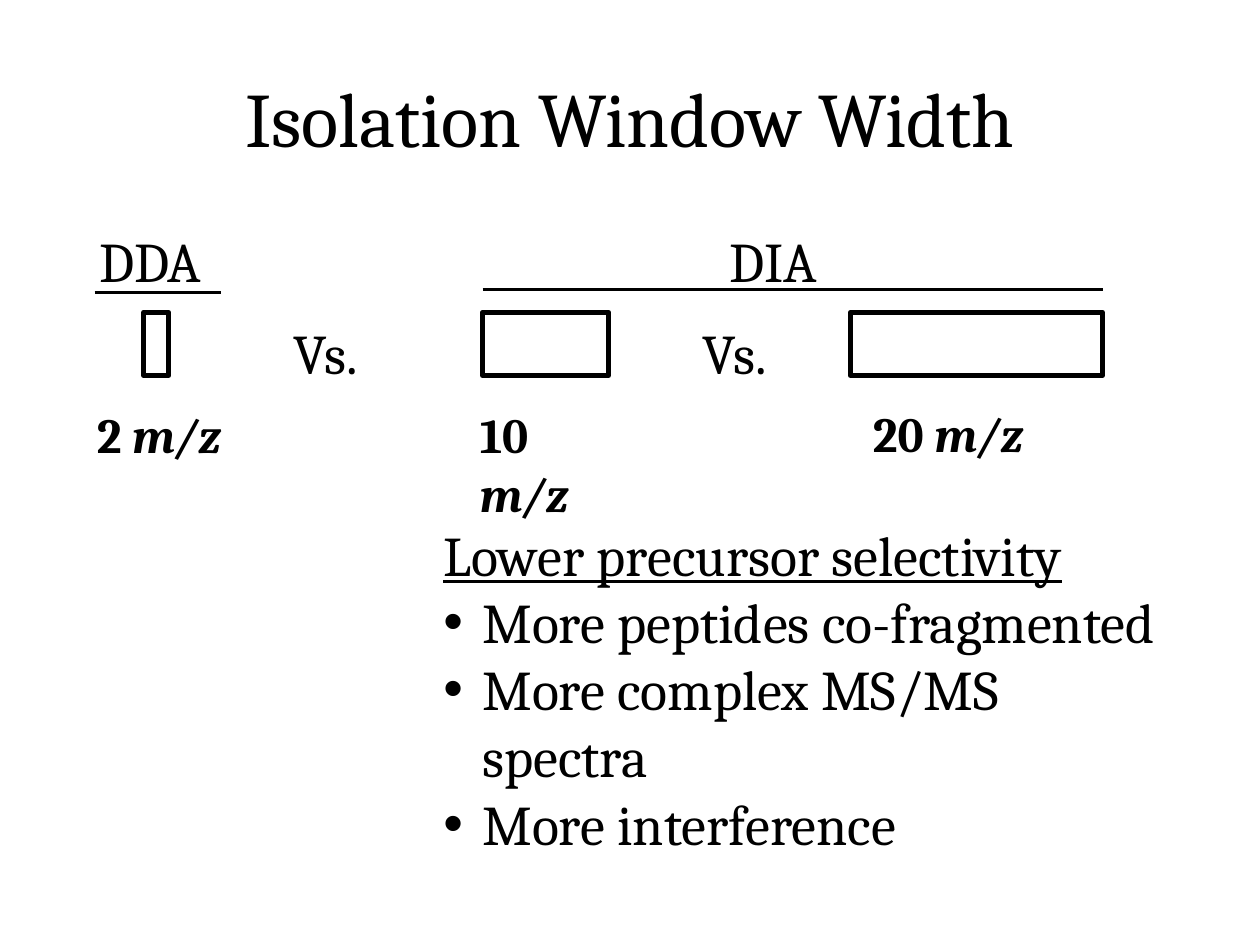
"""Build a slide on isolation window widths in DDA and DIA."""
from dataclasses import dataclass

import pptx
import pptx.dml.color
import pptx.enum.shapes
import pptx.enum.text
import pptx.oxml.ns
import pptx.util
from lxml import etree

Inches = pptx.util.Inches
Pt = pptx.util.Pt


@dataclass(frozen=True)
class Theme:
    """Colours, font and type sizes of the slide."""
    ink: pptx.dml.color.RGBColor = pptx.dml.color.RGBColor(0, 0, 0)
    paper: pptx.dml.color.RGBColor = pptx.dml.color.RGBColor(255, 255, 255)
    face: str = "Cambria"
    title: int = 44
    body: int = 32
    label: int = 28
    frame: float = 3
    rule: float = 1.5


@dataclass(frozen=True)
class Window:
    """An isolation window with its m/z label."""
    left: float
    width: float
    size: str
    tag_left: float
    tag_top: float
    tag_width: float


@dataclass(frozen=True)
class Word:
    """A short text on one line."""
    text: str
    left: float
    top: float
    width: float


@dataclass(frozen=True)
class Rule:
    """A level line below a heading."""
    left: float
    right: float
    top: float


THEME = Theme()
ROW = 2.48
WINDOWS = (
    Window(1.14, 0.2, "2 ", 0.67, 3.16, 1.22),
    Window(3.83, 1, "10 ", 3.71, 3.16, 1.37),
    Window(6.75, 2, "20 ", 6.83, 3.15, 1.4),
)
WORDS = (
    Word("Vs.", 2.23, ROW, 0.75),
    Word("Vs.", 5.48, ROW, 0.75),
    Word("DDA", 0.69, 1.75, 1.17),
    Word("DIA", 5.69, 1.75, 1.01),
)
RULES = (Rule(0.75, 1.75, 2.32), Rule(3.83, 8.75, 2.3))
HEAD = "Lower precursor selectivity"
POINTS = (
    "More peptides co-fragmented",
    "More complex MS/MS spectra",
    "More interference",
)


def style(para, size: int) -> None:
    """Set the theme font on a paragraph."""
    para.font.name = THEME.face
    para.font.size = Pt(size)
    para.font.color.rgb = THEME.ink


def add_box(slide, left: float, top: float, width: float, height: float, wrap: bool = False):
    """Add a text box and return its text frame."""
    box = slide.shapes.add_textbox(Inches(left), Inches(top), Inches(width), Inches(height))
    frame = box.text_frame
    frame.word_wrap = wrap
    frame.auto_size = pptx.enum.text.MSO_AUTO_SIZE.SHAPE_TO_FIT_TEXT
    return frame


def add_title(slide, text: str) -> None:
    """Place and fill the title."""
    title = slide.shapes.title
    title.left, title.top = Inches(0.5), Inches(0.3)
    title.width, title.height = Inches(9), Inches(1.25)
    frame = title.text_frame
    frame.text = text
    frame.vertical_anchor = pptx.enum.text.MSO_ANCHOR.MIDDLE
    para = frame.paragraphs[0]
    para.alignment = pptx.enum.text.PP_ALIGN.CENTER
    style(para, THEME.title)


def add_window(slide, win: Window) -> None:
    """Draw a window and its label."""
    rect = slide.shapes.add_shape(
        pptx.enum.shapes.MSO_SHAPE.RECTANGLE,
        Inches(win.left), Inches(ROW), Inches(win.width), Inches(0.5))
    rect.shadow.inherit = False
    rect.fill.solid()
    rect.fill.fore_color.rgb = THEME.paper
    rect.line.color.rgb = THEME.ink
    rect.line.width = Pt(THEME.frame)
    para = add_box(slide, win.tag_left, win.tag_top, win.tag_width, 0.57).paragraphs[0]
    style(para, THEME.label)
    para.font.bold = True
    para.add_run().text = win.size
    unit = para.add_run()
    unit.text = "m/z"
    unit.font.italic = True


def add_word(slide, word: Word) -> None:
    """Write a short text."""
    para = add_box(slide, word.left, word.top, word.width, 0.64).paragraphs[0]
    para.text = word.text
    style(para, THEME.body)


def add_rule(slide, rule: Rule) -> None:
    """Draw a line without a shadow."""
    line = slide.shapes.add_connector(
        pptx.enum.shapes.MSO_CONNECTOR.STRAIGHT,
        Inches(rule.left), Inches(rule.top), Inches(rule.right), Inches(rule.top))
    line.line.color.rgb = THEME.ink
    line.line.width = Pt(THEME.rule)
    etree.SubElement(line.element.spPr, pptx.oxml.ns.qn("a:effectLst"))


def add_bullet(para) -> None:
    """Give a paragraph a hanging bullet."""
    props = para._p.get_or_add_pPr()
    indent = Inches(0.31)
    props.set("marL", str(indent))
    props.set("indent", str(-indent))
    etree.SubElement(props, pptx.oxml.ns.qn("a:buFont"), typeface="Arial")
    etree.SubElement(props, pptx.oxml.ns.qn("a:buChar"), char="•")


def add_list(slide) -> None:
    """Write the underlined heading and its points."""
    frame = add_box(slide, 3.42, 4.08, 6, 2.26, wrap=True)
    head = frame.paragraphs[0]
    head.text = HEAD
    style(head, THEME.body)
    head.font.underline = True
    for text in POINTS:
        para = frame.add_paragraph()
        para.text = text
        add_bullet(para)
        style(para, THEME.body)


def main() -> None:
    """Build and save the slide."""
    deck = pptx.Presentation()
    deck.slide_width, deck.slide_height = Inches(10), Inches(7.5)
    slide = deck.slides.add_slide(deck.slide_layouts.get_by_name("Title Only"))
    add_title(slide, "Isolation Window Width")
    for win in WINDOWS:
        add_window(slide, win)
    for word in WORDS:
        add_word(slide, word)
    for rule in RULES:
        add_rule(slide, rule)
    add_list(slide)
    deck.save("out.pptx")


if __name__ == "__main__":
    main()
